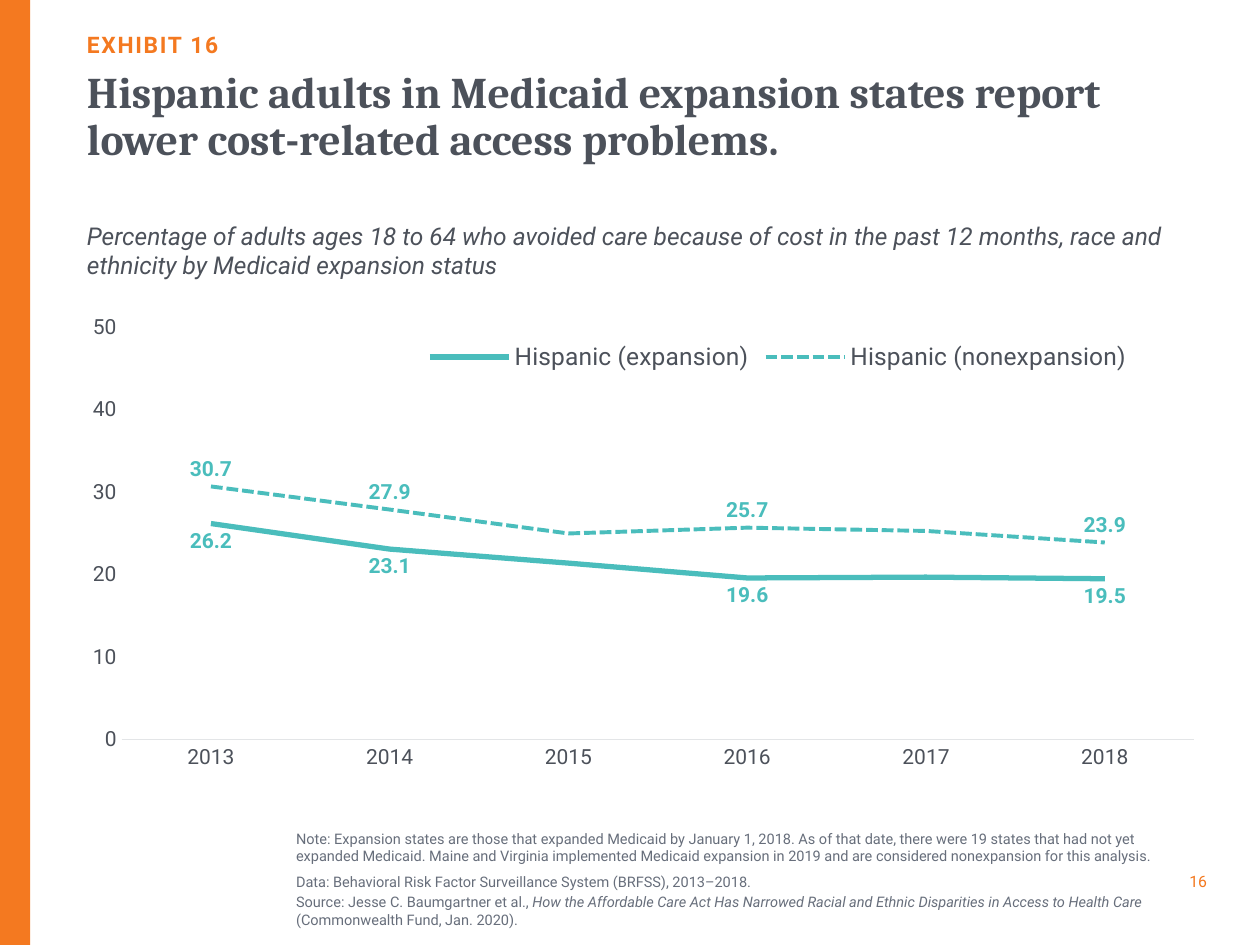
from pptx import Presentation, util as u
from pptx.chart.data import CategoryChartData
from pptx.dml.color import RGBColor
from pptx.enum import chart as ch, dml, shapes, text
from pptx.oxml import parse_xml
from pptx.oxml.ns import nsdecls

W, H = 10, 7.5
LEFT, WIDTH = 0.69, 8.85
ORANGE, TEAL, DARK, GREY, RULE = "F47920", "4ABDBC", "4C515A", "676E7B", "E3E5E7"
BODY, HEAD = "Roboto", "Cambria"

EXHIBIT = "EXHIBIT 16"
TITLE = "Hispanic adults in Medicaid expansion states report lower cost-related access problems."
SUBTITLE = ("Percentage of adults ages 18 to 64 who avoided care because of cost in the past "
            "12 months, race and ethnicity by Medicaid expansion status")
NOTES = [
    [("Note: Expansion states are those that expanded Medicaid by January 1, 2018. As of that date, "
      "there were 19 states that had not yet expanded Medicaid. Maine and Virginia implemented "
      "Medicaid expansion in 2019 and are considered nonexpansion for this analysis.", False)],
    [("Data: Behavioral Risk Factor Surveillance System (BRFSS), 2013–2018.", False)],
    [("Source: Jesse C. Baumgartner et al., ", False),
     ("How the Affordable Care Act Has Narrowed Racial and Ethnic Disparities in Access to "
      "Health Care ", True),
     ("(Commonwealth Fund, Jan. 2020).", False)],
]
YEARS = ["2013", "2014", "2015", "2016", "2017", "2018"]
UNLABELLED = ["2015", "2017"]
BELOW, ABOVE = ch.XL_LABEL_POSITION.BELOW, ch.XL_LABEL_POSITION.ABOVE
SERIES = [
    ("Hispanic (expansion)", [26.2, 23.1, 21.4, 19.6, 19.7, 19.5], 3, None, BELOW),
    ("Hispanic (nonexpansion)", [30.7, 27.9, 25, 25.7, 25.3, 23.9], 2.25,
     dml.MSO_LINE.SQUARE_DOT, ABOVE),
]
PLOT = (0.031, 0.02, 0.962, 0.871)
LEGEND = (0.3, 0.04, 0.64, 0.085)


def rgb(value):
    return RGBColor.from_string(value)


def style(font, size, color, name=BODY, bold=False, italic=False):
    font.size, font.name, font.bold, font.italic = u.Pt(size), name, bold, italic
    font.color.rgb = rgb(color)


def add_text(s, box, paragraphs, size, color, name=BODY, bold=False, italic=False, wrap=True,
             anchor=text.MSO_ANCHOR.MIDDLE, align=None, line=None, tracking=0, before=0, after=0):
    tf = s.shapes.add_textbox(*map(u.Inches, box)).text_frame
    tf.margin_left = tf.margin_right = tf.margin_top = tf.margin_bottom = 0
    tf.word_wrap, tf.vertical_anchor = wrap, anchor
    if isinstance(paragraphs, str):
        paragraphs = [[(paragraphs, italic)]]
    for i, runs in enumerate(paragraphs):
        p = tf.add_paragraph() if i else tf.paragraphs[0]
        p.alignment, p.line_spacing = align, line
        p.space_before = u.Pt(before if i else 0)
        p.space_after = u.Pt(0 if i else after)
        for words, slanted in runs:
            r = p.add_run()
            r.text = words
            style(r.font, size, color, name, bold, slanted)
            if tracking:
                r.font._element.set("spc", str(tracking * 100))


def layout(box, inner=False):
    target = '<c:layoutTarget val="inner"/>' if inner else ""
    modes = "".join(f'<c:{k}Mode val="edge"/>' for k in "xy")
    sizes = "".join(f'<c:{k} val="{v}"/>' for k, v in zip("xywh", box))
    return parse_xml(f'<c:layout {nsdecls("c")}><c:manualLayout>{target}{modes}{sizes}'
                     '</c:manualLayout></c:layout>')


def add_line_chart(s, box):
    data = CategoryChartData(number_format="#,##0.0")
    data.categories = YEARS
    for name, values, *_ in SERIES:
        data.add_series(name, values)
    chart = s.shapes.add_chart(ch.XL_CHART_TYPE.LINE, *map(u.Inches, box), data).chart
    style(chart.font, 10, DARK)
    chart.has_title = False

    chart.has_legend = True
    legend = chart.legend
    legend.position = ch.XL_LEGEND_POSITION.BOTTOM
    legend.include_in_layout = True
    style(legend.font, 14, DARK)
    for old in legend._element.xpath("c:layout"):
        legend._element.remove(old)
    legend._element.xpath("c:legendPos")[0].addnext(layout(LEGEND))

    area = chart._chartSpace.chart.plotArea
    for old in area.xpath("c:layout"):
        area.remove(old)
    area.insert(0, layout(PLOT, inner=True))

    for axis in (chart.category_axis, chart.value_axis):
        style(axis.tick_labels.font, 12, DARK)
        axis.major_tick_mark = axis.minor_tick_mark = ch.XL_TICK_MARK.NONE
        axis.has_major_gridlines = False
    cat, val = chart.category_axis, chart.value_axis
    cat.format.line.color.rgb, cat.format.line.width = rgb(RULE), u.Pt(0.75)
    val.format.line.fill.background()
    val.minimum_scale, val.maximum_scale, val.major_unit = 0, 50, 10
    val.tick_labels.number_format, val.tick_labels.number_format_is_linked = "0", False

    chart.plots[0].vary_by_categories = False
    for series, (_, _, width, dash, position) in zip(chart.plots[0].series, SERIES):
        series.smooth = False
        series.marker.style = ch.XL_MARKER_STYLE.NONE
        line = series.format.line
        line.color.rgb, line.width = rgb(TEAL), u.Pt(width)
        if dash:
            line.dash_style = dash
        labels = series.data_labels
        labels.show_value, labels.position = True, position
        labels.number_format, labels.number_format_is_linked = "#,##0.0", False
        style(labels.font, 12, TEAL, bold=True)
        for i, year in enumerate(UNLABELLED):
            labels._element.insert(i, parse_xml(
                f'<c:dLbl {nsdecls("c")}><c:idx val="{YEARS.index(year)}"/>'
                '<c:delete val="1"/></c:dLbl>'))


def main():
    prs = Presentation()
    prs.slide_width, prs.slide_height = u.Inches(W), u.Inches(H)
    s = prs.slides.add_slide(prs.slide_layouts[6])
    top = text.MSO_ANCHOR.TOP

    band = s.shapes.add_shape(shapes.MSO_SHAPE.RECTANGLE, 0, 0, u.Inches(0.24), u.Inches(H))
    band.shadow.inherit = False
    band.fill.solid()
    band.fill.fore_color.rgb = rgb(ORANGE)
    band.line.fill.background()

    add_text(s, (9.27, 6.88, 0.31, 0.22), "16", 9, ORANGE, wrap=False,
             align=text.PP_ALIGN.RIGHT)
    add_text(s, (2.35, 6.55, 6.92, 0.85), NOTES, 8.3, GREY, before=1.7, after=3)
    add_text(s, (LEFT, 0.19, WIDTH, 0.27), EXHIBIT, 13, ORANGE, bold=True, tracking=1,
             anchor=text.MSO_ANCHOR.BOTTOM)
    add_text(s, (LEFT, 0.56, WIDTH, 1.3), TITLE, 25, DARK, HEAD, bold=True, anchor=top, line=0.9)
    add_line_chart(s, (LEFT, 2.5, WIDTH, 3.78))
    add_text(s, (LEFT, 1.75, 9.17, 0.47), SUBTITLE, 14, DARK, italic=True)
    prs.save("out.pptx")


if __name__ == "__main__":
    main()
